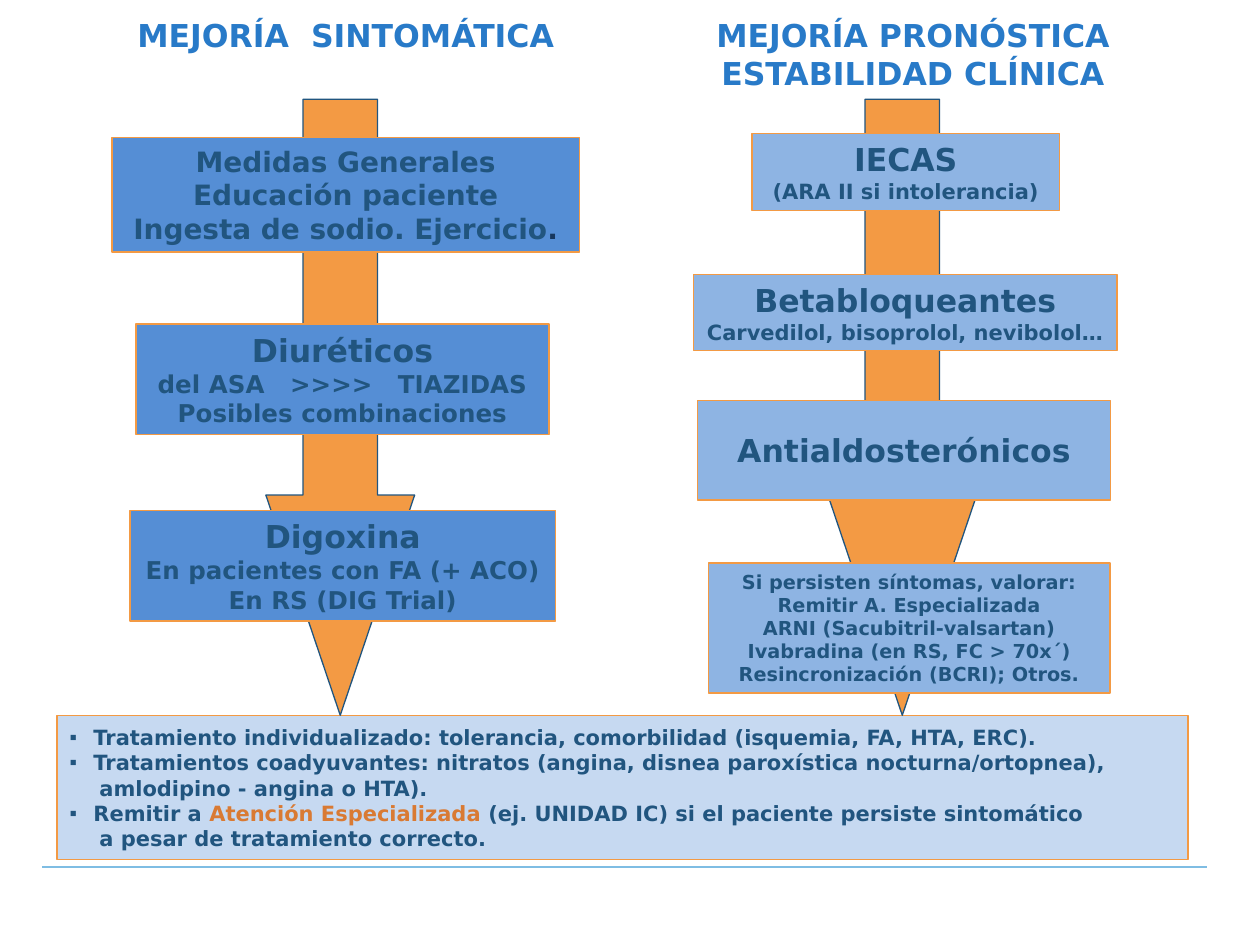
from lxml import etree
from pptx import Presentation
from pptx.dml.color import RGBColor
from pptx.enum.shapes import MSO_CONNECTOR, MSO_SHAPE
from pptx.enum.text import MSO_ANCHOR, MSO_AUTO_SIZE, PP_ALIGN
from pptx.oxml.ns import qn
from pptx.util import Cm, Pt

RECT, DOWN_ARROW = MSO_SHAPE.RECTANGLE, MSO_SHAPE.DOWN_ARROW
STRAIGHT = MSO_CONNECTOR.STRAIGHT
TOP, MIDDLE = MSO_ANCHOR.TOP, MSO_ANCHOR.MIDDLE
CENTER, LEFT = PP_ALIGN.CENTER, PP_ALIGN.LEFT
NO_FIT = MSO_AUTO_SIZE.NONE

NAVY = RGBColor(0x21, 0x55, 0x7F)
DARK = RGBColor(0x17, 0x37, 0x5E)
HEADING = RGBColor(0x28, 0x7A, 0xC8)
ORANGE = RGBColor(0xF3, 0x9A, 0x44)
ACCENT = RGBColor(0xD9, 0x7A, 0x33)
MID_BLUE = RGBColor(0x55, 0x8E, 0xD5)
LIGHT_BLUE = RGBColor(0x8E, 0xB4, 0xE3)
PALE_BLUE = RGBColor(0xC6, 0xD9, 0xF1)
RULE = RGBColor(0x7F, 0xBD, 0xE3)

SYMPTOM_BOXES = [
    ((2.26, 2.77, 9.42, 2.31), [("Medidas Generales", 16), ("Educación paciente", 16),
                                ("Ingesta de sodio. Ejercicio", 16)]),
    ((2.74, 6.53, 8.33, 2.23), [("Diuréticos", 18), ("del ASA   >>>>   TIAZIDAS", 14),
                                ("Posibles combinaciones", 14)]),
    ((2.62, 10.29, 8.58, 2.23), [("Digoxina", 18), ("En pacientes con FA (+ ACO)", 14),
                                 ("En RS (DIG Trial)", 14)]),
]
PROGNOSIS_BOXES = [
    ((15.16, 2.69, 6.2, 1.55), [("IECAS", 18), ("(ARA II si intolerancia)", 12)]),
    ((13.98, 5.54, 8.54, 1.53), [("Betabloqueantes", 18),
                                 ("Carvedilol, bisoprolol, nevibolol…", 12)]),
    ((14.06, 8.08, 8.33, 2), [("Antialdosterónicos", 18)]),
    ((14.28, 11.35, 8.1, 2.62), [("Si persisten síntomas, valorar:", 11),
                                 ("Remitir A. Especializada", 11),
                                 ("ARNI (Sacubitril-valsartan)", 11),
                                 ("Ivabradina (en RS, FC > 70x´)", 11),
                                 ("Resincronización (BCRI); Otros.", 11)]),
]
ADVICE = [
    (True, [("Tratamiento individualizado: tolerancia, comorbilidad "
             "(isquemia, FA, HTA, ERC).", NAVY)]),
    (True, [("Tratamientos coadyuvantes: nitratos (angina, disnea paroxística "
             "nocturna/ortopnea),", NAVY)]),
    (False, [("amlodipino - angina o HTA).", NAVY)]),
    (True, [("Remitir a ", NAVY), ("Atención Especializada ", ACCENT),
            ("(ej. UNIDAD IC) si el paciente persiste sintomático", NAVY)]),
    (False, [("a pesar de tratamiento correcto.", NAVY)]),
]


def add_run(p, text, size=12, color=NAVY, font="DejaVu Sans", bold=True):
    """Append a formatted run to a paragraph."""
    r = p.add_run()
    r.text = text
    r.font.size, r.font.name, r.font.bold = Pt(size), font, bold
    r.font.color.rgb = color


def next_paragraph(tf, i, align=CENTER):
    """Return paragraph i of a frame, added when it is not the first."""
    p = tf.add_paragraph() if i else tf.paragraphs[0]
    p.alignment = align
    p.space_before = Pt(0)
    return p


class Deck:
    """Holds the style and the current slide."""

    def __init__(self, prs, line_width=0.75):
        self.line_width = Pt(line_width)
        self.s = prs.slides.add_slide(prs.slide_layouts[1])

    def place(self, sp, box):
        sp.left, sp.top, sp.width, sp.height = (Cm(v) for v in box)

    def paint(self, sp, fill, line):
        sp.fill.solid()
        sp.fill.fore_color.rgb = fill
        sp.line.color.rgb = line
        sp.line.width = self.line_width

    def frame(self, sp, anchor, wrap=True):
        tf = sp.text_frame
        tf.auto_size, tf.word_wrap, tf.vertical_anchor = NO_FIT, wrap, anchor
        return tf

    def heading(self, sp, text, box):
        self.place(sp, box)
        add_run(next_paragraph(self.frame(sp, TOP), 0), text, size=18, color=HEADING)

    def shape(self, kind, box, fill, line):
        sp = self.s.shapes.add_shape(kind, *(Cm(v) for v in box))
        sp.shadow.inherit = False
        self.paint(sp, fill, line)
        return sp

    def arrow(self, left):
        sp = self.shape(DOWN_ARROW, (left, 2, 3, 12.42), ORANGE, NAVY)
        sp.adjustments[0], sp.adjustments[1] = 0.5, 1.48

    def box(self, box, lines, fill):
        tf = self.frame(self.shape(RECT, box, fill, ORANGE), MIDDLE, wrap=False)
        for i, (text, size) in enumerate(lines):
            add_run(next_paragraph(tf, i), text, size=size)
        return tf

    def bullet_list(self, sp, items, box):
        self.place(sp, box)
        self.paint(sp, PALE_BLUE, ORANGE)
        tf = self.frame(sp, MIDDLE)
        for i, (bulleted, runs) in enumerate(items):
            p = next_paragraph(tf, i, LEFT)
            pPr = p._p.get_or_add_pPr()
            pPr.set("marL", str(Cm(0.48 if bulleted else 0.6)))
            pPr.set("indent", str(Cm(-0.48 if bulleted else 0)))
            if bulleted:
                etree.SubElement(pPr, qn("a:buChar")).set("char", "▪")
            else:
                etree.SubElement(pPr, qn("a:buNone"))
            for text, color in runs:
                add_run(p, text, color=color)

    def rule(self, x1, x2, y):
        cx = self.s.shapes.add_connector(STRAIGHT, Cm(x1), Cm(y), Cm(x2), Cm(y))
        cx.line.color.rgb = RULE
        cx.line.width = self.line_width
        etree.SubElement(cx._element.spPr, qn("a:effectLst"))


def main():
    """Build the treatment slide."""
    prs = Presentation()
    prs.slide_width, prs.slide_height = Cm(25.4), Cm(19.05)
    deck = Deck(prs)
    title, body = deck.s.placeholders
    deck.rule(0.85, 24.33, 17.48)
    deck.heading(title, "MEJORÍA  SINTOMÁTICA", (2.5, 0.2, 8.94, 1.8))
    right_title = deck.s.shapes.add_textbox(0, 0, 0, 0)
    deck.heading(right_title, "MEJORÍA PRONÓSTICA ESTABILIDAD CLÍNICA", (12.83, 0.2, 11.15, 1.8))
    for left, boxes, fill in ((16.69, PROGNOSIS_BOXES, LIGHT_BLUE),
                              (5.36, SYMPTOM_BOXES, MID_BLUE)):
        deck.arrow(left)
        frames = [deck.box(box, lines, fill) for box, lines in boxes]
    add_run(frames[0].paragraphs[-1], ".", size=16, color=DARK)
    deck.bullet_list(body, ADVICE, (1.15, 14.43, 22.8, 2.9))
    prs.save("out.pptx")


if __name__ == "__main__":
    main()
